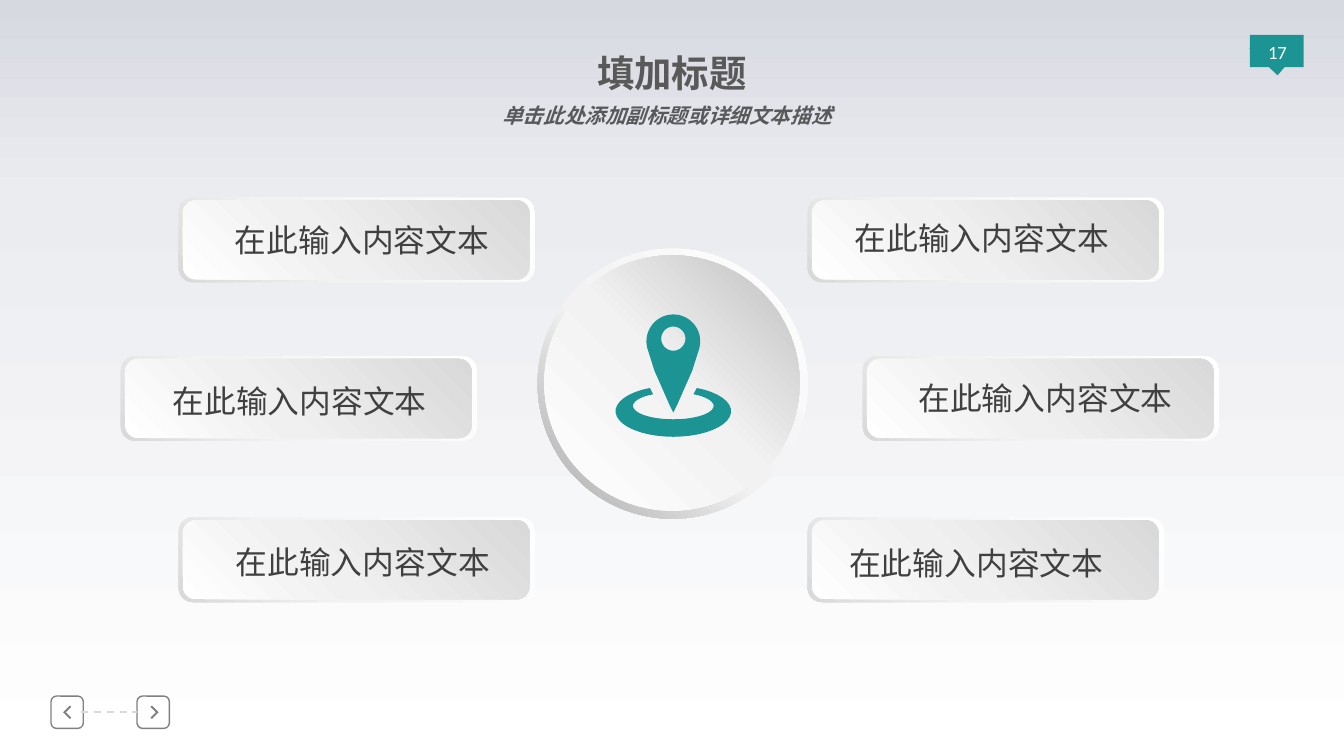
import math

from lxml import etree
from pptx import Presentation
from pptx import util as u
from pptx.dml.color import RGBColor
from pptx.enum import dml, shapes, text
from pptx.oxml.ns import qn

Inches = u.Inches
TEAL = "1C9494"
GRAY = "808080"
CJK_FONT = "Noto Sans CJK SC"
CARD_TEXT = "在此输入内容文本"
CARD_RIM = [(0, "FFFFFF"), (62, "F2F2F2"), (100, "D9D9D9")]
CARD_FACE = [(0, "FFFFFF"), (42, "F0F0F0"), (100, "D9D9D9")]
CIRCLE_RIM = [(0, "FFFFFF"), (55, "F2F2F2"), (100, "A6A6A6")]
CIRCLE_FACE = [(0, "FFFFFF"), (51, "F2F2F2"), (100, "BFBFBF")]
CARDS = [
    ((6.01, 3.85), (6.01, 4, 2.51)),
    ((1.33, 3.85), (1.43, 3.99, 2.54)),
    ((6.42, 2.65), (6.46, 2.77, 2.64)),
    ((0.9, 2.65), (0.91, 2.79, 2.64)),
    ((6.01, 1.47), (6.04, 1.58, 2.53)),
    ((1.33, 1.47), (1.42, 1.59, 2.55)),
]


def color(hex_string):
    return RGBColor.from_string(hex_string)


def paint_solid(shape, hex_string):
    shape.fill.solid()
    shape.fill.fore_color.rgb = color(hex_string)


def paint_gradient(fill, owner, stops, angle):
    fill.gradient()
    fill.gradient_angle = 360 - angle
    stop_list = owner.find(".//" + qn("a:gsLst"))
    for stop in list(stop_list):
        stop_list.remove(stop)
    for position, hex_string in stops:
        stop = etree.SubElement(stop_list, qn("a:gs"), pos=str(position * 1000))
        etree.SubElement(stop, qn("a:srgbClr"), val=hex_string)


def add_preset(slide, kind, left, top, width, height):
    shape = slide.shapes.add_shape(
        kind, Inches(left), Inches(top), Inches(width), Inches(height))
    shape.shadow.inherit = False
    shape.line.fill.background()
    return shape


def add_gradient_shape(slide, kind, box, stops, angle):
    shape = add_preset(slide, kind, *box)
    paint_gradient(shape.fill, shape._element.spPr, stops, angle)
    return shape


def add_outline(slide, contours, hex_string):
    builder = None
    for contour in contours:
        points = [(Inches(x), Inches(y)) for x, y in contour]
        if builder is None:
            builder = slide.shapes.build_freeform(*points[0], scale=1.0)
        else:
            builder.move_to(*points[0])
        builder.add_line_segments(points[1:], close=True)
    shape = builder.convert_to_shape()
    shape.shadow.inherit = False
    shape.line.fill.background()
    paint_solid(shape, hex_string)


def add_text(slide, box, words, size, hex_string, font=CJK_FONT,
             margins=(0.1, 0.05, 0.1, 0.05), wrap=True, grow=True,
             bold=False, italic=False):
    label = slide.shapes.add_textbox(*[Inches(value) for value in box])
    frame = label.text_frame
    frame.word_wrap = wrap
    if grow:
        frame.auto_size = text.MSO_AUTO_SIZE.SHAPE_TO_FIT_TEXT
    (frame.margin_left, frame.margin_top,
     frame.margin_right, frame.margin_bottom) = map(Inches, margins)
    paragraph = frame.paragraphs[0]
    paragraph.text = words
    paragraph.alignment = text.PP_ALIGN.CENTER
    paragraph.font.size = u.Pt(size)
    paragraph.font.bold = bold
    paragraph.font.italic = italic
    paragraph.font.color.rgb = color(hex_string)
    paragraph.font.name = font
    properties = paragraph._p.pPr.find(qn("a:defRPr"))
    etree.SubElement(properties, qn("a:ea"), typeface=font)
    return frame


def arc(center_x, center_y, radius_x, radius_y, start, end, steps=36):
    angles = [math.radians(start + (end - start) * step / steps)
              for step in range(steps + 1)]
    return [(center_x + radius_x * math.cos(angle),
             center_y + radius_y * math.sin(angle)) for angle in angles]


def add_page_number(slide):
    paint_solid(add_preset(slide, shapes.MSO_SHAPE.RECTANGLE, 9.3, 0.26, 0.4, 0.24), TEAL)
    pointer = add_preset(slide, shapes.MSO_SHAPE.ISOSCELES_TRIANGLE, 9.3, 0.35, 0.4, 0.21)
    pointer.rotation = 176.8
    paint_solid(pointer, TEAL)
    frame = add_text(slide, (9.32, 0.22, 0.37, 0.38), "17", 10, "FFFFFF",
                     font="Calibri", margins=(0, 0, 0, 0.05), grow=False)
    frame.vertical_anchor = text.MSO_ANCHOR.MIDDLE


def add_button(slide, left, chevron):
    button = add_preset(slide, shapes.MSO_SHAPE.ROUNDED_RECTANGLE, left, 5.18, 0.24, 0.24)
    button.fill.background()
    button.line.color.rgb = color(GRAY)
    button.line.width = u.Pt(0.75)
    add_outline(slide, [chevron], GRAY)
    return button


def add_navigation(slide):
    back = [(0.53, 5.26), (0.49, 5.3), (0.53, 5.34),
            (0.52, 5.35), (0.47, 5.3), (0.52, 5.25)]
    add_button(slide, 0.38, back)
    following = add_button(slide, 1.02, [(1.65 - x, y) for x, y in back])
    link = slide.shapes.add_connector(
        shapes.MSO_CONNECTOR.STRAIGHT,
        Inches(0.6), Inches(5.3), Inches(1.02), Inches(5.3))
    link.end_connect(following, 1)
    link.line.color.rgb = color("D9D9D9")
    link.line.width = u.Pt(1)
    link.line.dash_style = dml.MSO_LINE.DASH
    etree.SubElement(link._element.spPr, qn("a:effectLst"))


def add_card(slide, left, top):
    kind = shapes.MSO_SHAPE.ROUNDED_RECTANGLE
    add_gradient_shape(slide, kind, (left, top, 2.65, 0.63), CARD_RIM, 135)
    add_gradient_shape(slide, kind, (left + 0.03, top + 0.02, 2.58, 0.59), CARD_FACE, 315)


def add_location_circle(slide):
    rim = add_gradient_shape(slide, shapes.MSO_SHAPE.DONUT,
                             (4, 1.85, 2.01, 2.01), CIRCLE_RIM, 135)
    rim.adjustments[0] = 0.05
    add_gradient_shape(slide, shapes.MSO_SHAPE.OVAL, (4.05, 1.9, 1.9, 1.9), CIRCLE_FACE, 315)
    center = 5.01
    base = (arc(center, 3.06, 0.43, 0.19, -66, 246)
            + arc(center, 3.02, 0.3, 0.1, 240, -60))
    add_outline(slide, [base], TEAL)
    side = [(0.14, 2.76), (0.1, 2.85), (0.03, 3.01)]
    pin = (arc(center, 2.54, 0.2, 0.2, 165, 375)
           + [(center + offset, y) for offset, y in side]
           + [(center, 3.07)]
           + [(center - offset, y) for offset, y in reversed(side)])
    hole = arc(center, 2.52, 0.09, 0.09, 360, 0)
    add_outline(slide, [pin, hole], TEAL)


def main():
    presentation = Presentation()
    presentation.slide_width = Inches(10)
    presentation.slide_height = Inches(10 * 9 / 16)
    slide = presentation.slides.add_slide(presentation.slide_layouts[6])
    paint_gradient(slide.background.fill, slide._element,
                   [(0, "D7D9E1"), (26, "EBECF0"), (100, "FFFFFF")], 90)
    add_page_number(slide)
    add_navigation(slide)
    for corner, _ in CARDS:
        add_card(slide, *corner)
    for _, (left, top, width) in CARDS:
        add_text(slide, (left, top, width, 0.39), CARD_TEXT, 17, "404040")
    add_text(slide, (3.9, 0.37, 2.2, 0.34), "填加标题", 20, "595959",
             margins=(0, 0, 0, 0), bold=True)
    add_text(slide, (3.63, 0.72, 2.67, 0.29), "单击此处添加副标题或详细文本描述",
             11, "58595B", wrap=False, bold=True, italic=True)
    add_location_circle(slide)
    presentation.save("out.pptx")


if __name__ == "__main__":
    main()
